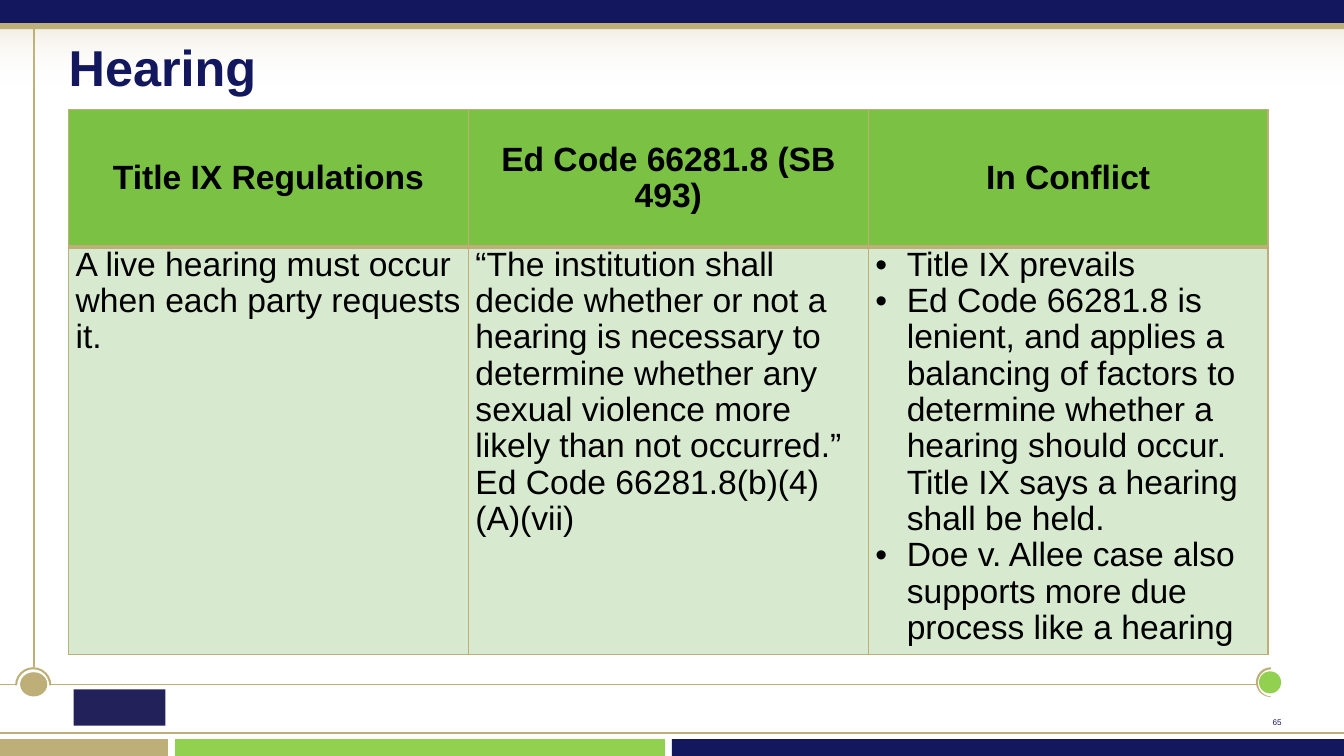
from dataclasses import dataclass

from lxml.etree import SubElement
from pptx import Presentation
from pptx.dml.color import RGBColor
from pptx.enum.shapes import MSO_CONNECTOR, MSO_SHAPE
from pptx.enum.text import MSO_ANCHOR, MSO_AUTO_SIZE, PP_ALIGN
from pptx.oxml.ns import qn
from pptx.util import Pt


@dataclass(frozen=True)
class Theme:
    font: str = "Arial"
    navy: str = "12175E"
    tan: str = "BDAF77"
    lime: str = "92D050"
    white: str = "FFFFFF"
    black: str = "000000"
    mark: str = "23215A"
    header_fill: str = "7BC143"
    body_fill: str = "D7E9CF"
    title_size: float = 36
    table_size: float = 24
    number_size: float = 10


def rgb(value):
    return RGBColor.from_string(value)


def write(frame, text, *, font, size, color, bold=False, align=PP_ALIGN.LEFT,
          anchor=MSO_ANCHOR.TOP, spacing=None, bullet_indent=0, baseline=0):
    """Fill a text frame, one paragraph for each line of text."""
    frame.vertical_anchor = anchor
    for i, line in enumerate(text.split("\n")):
        paragraph = frame.paragraphs[0] if i == 0 else frame.add_paragraph()
        paragraph.alignment = align
        if spacing:
            paragraph.line_spacing = spacing
        if bullet_indent:
            properties = paragraph._p.get_or_add_pPr()
            properties.set("marL", str(Pt(bullet_indent)))
            properties.set("indent", str(-Pt(bullet_indent)))
            SubElement(properties, qn("a:buFont")).set("typeface", font)
            SubElement(properties, qn("a:buChar")).set("char", "•")
        run = paragraph.add_run()
        run.text = line
        run.font.name, run.font.size, run.font.bold = font, Pt(size), bold
        run.font.color.rgb = rgb(color)
        if baseline:
            run.font._element.set("baseline", str(baseline * 1000))


def set_margins(target, side=0):
    target.margin_left = target.margin_right = Pt(side)
    target.margin_top = target.margin_bottom = 0


class SlideBuilder:
    def __init__(self, slide, theme):
        self.slide, self.theme = slide, theme

    def shape(self, preset, x, y, width, height, color, rotation=0):
        shape = self.slide.shapes.add_shape(preset, Pt(x), Pt(y), Pt(width), Pt(height))
        shape.shadow.inherit = False
        shape.rotation = rotation
        shape.line.fill.background()
        shape.fill.solid()
        shape.fill.fore_color.rgb = rgb(color)
        return shape

    def fading_bar(self, x, y, width, height, stops):
        """Draw a bar that fades downward; stops are (colour, opacity in %)."""
        bar = self.shape(MSO_SHAPE.RECTANGLE, x, y, width, height, self.theme.white)
        bar.fill.gradient()
        bar.fill.gradient_angle = 270
        for stop, (color, _) in zip(bar.fill.gradient_stops, stops):
            stop.color.rgb = rgb(color)
        gradient = bar._element.spPr.find(qn("a:gradFill"))
        for color_node, (_, opacity) in zip(gradient.iter(qn("a:srgbClr")), stops):
            SubElement(color_node, qn("a:alpha")).set("val", str(opacity * 1000))

    def rule(self, x1, y1, x2, y2):
        line = self.slide.shapes.add_connector(
            MSO_CONNECTOR.STRAIGHT, Pt(x1), Pt(y1), Pt(x2), Pt(y2))
        line.line.color.rgb = rgb(self.theme.tan)
        line.line.width = Pt(1)
        SubElement(line._element.spPr, qn("a:effectLst"))

    def node(self, arc, halo, dot, color, rotation=0):
        """Draw a round rail end: a half ring, a white disc and a coloured dot."""
        self.shape(MSO_SHAPE.BLOCK_ARC, *arc, self.theme.tan, rotation)
        self.shape(MSO_SHAPE.OVAL, *halo, self.theme.white)
        self.shape(MSO_SHAPE.OVAL, *dot, color)

    def title(self, text, x, y, width, height):
        title = self.slide.shapes.title
        self.slide.shapes._spTree.append(title._element)
        title.left, title.top, title.width, title.height = map(Pt, (x, y, width, height))
        set_margins(title.text_frame)
        write(title.text_frame, text, font=self.theme.font, size=self.theme.title_size,
              color=self.theme.navy, bold=True, anchor=MSO_ANCHOR.MIDDLE)

    def page_number(self, text, x, y, width, height):
        box = self.slide.shapes.add_textbox(Pt(x), Pt(y), Pt(width), Pt(height))
        frame = box.text_frame
        set_margins(frame)
        frame.word_wrap = False
        frame.auto_size = MSO_AUTO_SIZE.NONE
        write(frame, text, font=self.theme.font, size=self.theme.number_size,
              color=self.theme.navy, align=PP_ALIGN.CENTER,
              anchor=MSO_ANCHOR.MIDDLE, baseline=-25)

    def borders(self, cell, **widths):
        properties = cell._tc.get_or_add_tcPr()
        for side in "LRTB":
            line = SubElement(properties, qn(f"a:ln{side}"))
            line.set("w", str(Pt(widths.get(side, 1))))
            fill = SubElement(line, qn("a:solidFill"))
            SubElement(fill, qn("a:srgbClr")).set("val", self.theme.tan)

    def table(self, columns, x, y, column_width, row_heights):
        """Draw columns of (heading, body, bullet indent)."""
        theme = self.theme
        table = self.slide.shapes.add_table(
            len(row_heights), len(columns), Pt(x), Pt(y),
            Pt(column_width * len(columns)), Pt(sum(row_heights))).table
        for row, height in zip(table.rows, row_heights):
            row.height = Pt(height)
        common = dict(font=theme.font, size=theme.table_size,
                      color=theme.black, spacing=0.97)
        for i, (heading, body, indent) in enumerate(columns):
            table.columns[i].width = Pt(column_width)
            head_cell, body_cell = table.cell(0, i), table.cell(1, i)
            self.borders(head_cell, B=3)
            self.borders(body_cell, T=3)
            for cell, fill in ((head_cell, theme.header_fill), (body_cell, theme.body_fill)):
                set_margins(cell, 5.04)
                cell.fill.solid()
                cell.fill.fore_color.rgb = rgb(fill)
            write(head_cell.text_frame, heading, bold=True, align=PP_ALIGN.CENTER, **common)
            head_cell.vertical_anchor = MSO_ANCHOR.MIDDLE
            write(body_cell.text_frame, body, bullet_indent=indent, **common)


COLUMNS = [
    ("Title IX Regulations",
     "A live hearing must occur when each party requests it.", 0),
    ("Ed Code 66281.8 (SB 493)",
     "“The institution shall decide whether or not a hearing is necessary to determine "
     "whether any sexual violence more likely than not occurred.” "
     "Ed Code 66281.8(b)(4)(A)(vii)", 0),
    ("In Conflict",
     "Title IX prevails\n"
     "Ed Code 66281.8 is lenient, and applies a balancing of factors to determine "
     "whether a hearing should occur. Title IX says a hearing shall be held.\n"
     "Doe v. Allee case also supports more due process like a hearing", 22.5),
]


def main():
    deck = Presentation()
    deck.slide_width, deck.slide_height = Pt(960), Pt(540)
    theme = Theme()
    page = SlideBuilder(deck.slides.add_slide(deck.slide_layouts[5]), theme)

    page.node((897.1, 476.6, 21.3, 21.3), (898.6, 478.1, 19.4, 19.4),
              (899.3, 479.5, 15.8, 15.8), theme.lime, rotation=270)
    page.rule(24.2, 0, 24.2, 476.6)
    page.fading_bar(0, 20.2, 960, 40.3, [(theme.tan, 20), (theme.white, 0)])
    page.shape(MSO_SHAPE.RECTANGLE, 0, 0, 960, 17.3, theme.navy)
    for left, right, color in ((480, 960, theme.navy), (125, 475, theme.lime),
                               (0, 120, theme.tan)):
        page.shape(MSO_SHAPE.RECTANGLE, left, 528, right - left, 12, color)
    page.shape(MSO_SHAPE.RECTANGLE, 52.6, 492.5, 65.5, 25.9, theme.mark)
    for left, right, y in ((0, 26.6, 488.9), (0, 960, 523.5), (36.7, 897.1, 488.9)):
        page.rule(left, y, right, y)
    page.shape(MSO_SHAPE.RECTANGLE, 0, 16.6, 960, 4.3, theme.tan)
    page.node((10.8, 476.6, 25.9, 25.9), (12.2, 478.1, 23, 23.8),
              (14.4, 480.2, 19.4, 17.3), theme.tan)

    page.title("Hearing", 49, 25.2, 871.2, 43.9)
    page.table(COLUMNS, 49, 78.5, 285.6, (97.9, 290.9))
    page.page_number("65", 909.4, 506.2, 5.8, 12.2)
    deck.save("out.pptx")


if __name__ == "__main__":
    main()
